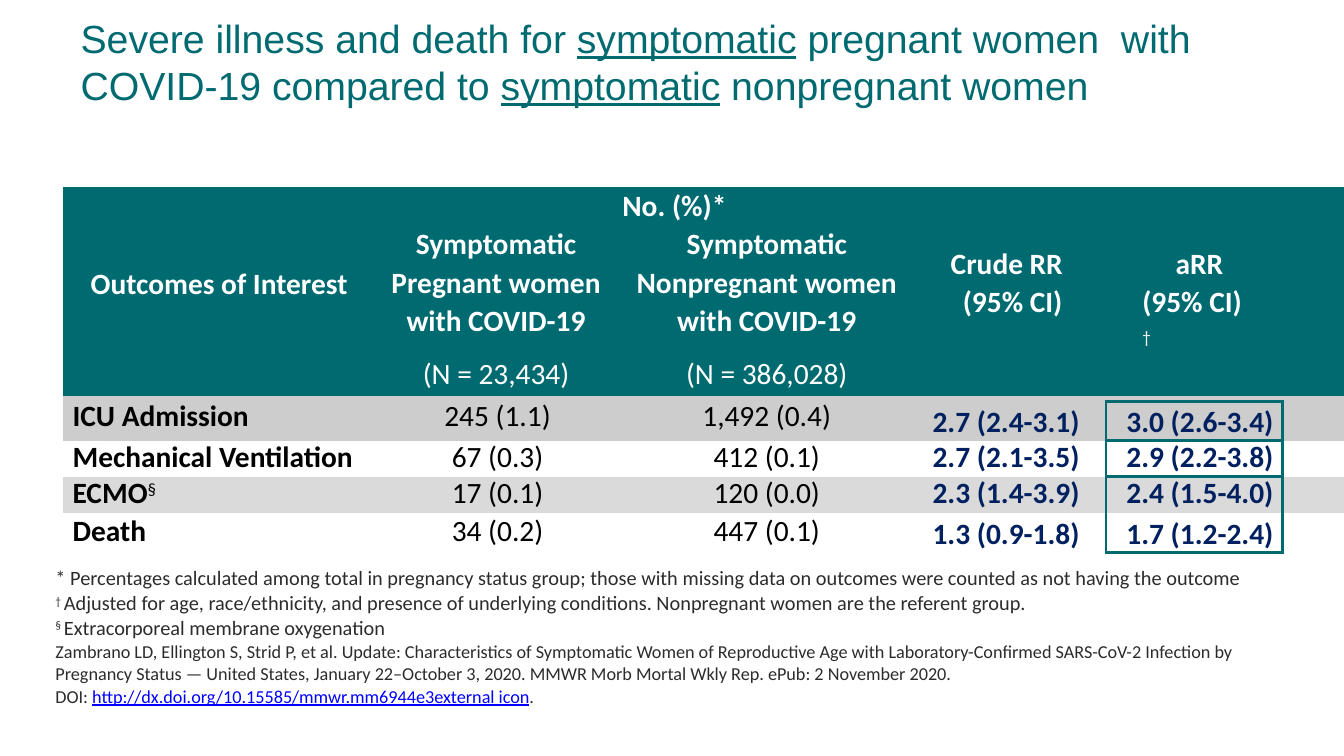
from dataclasses import dataclass

from lxml import etree
from pptx import Presentation
from pptx import util as u
from pptx.dml.color import RGBColor
from pptx.enum import text
from pptx.oxml import ns


@dataclass(frozen=True)
class Theme:
    teal: str = "006A71"
    white: str = "FFFFFF"
    black: str = "000000"
    navy: str = "002060"
    ink: str = "2D2C2C"
    link: str = "0000FF"
    dark_band: str = "CDCDCD"
    light_band: str = "DADADA"
    heading_font: str = "Arial"
    body_font: str = "Calibri"
    title_size: float = 28
    table_size: float = 21
    note_size: float = 14.5
    mark_size: float = 14.2
    citation_size: float = 13
    border: float = 2.25


THEME = Theme()
LEFT, CENTER, RIGHT = text.PP_ALIGN.LEFT, text.PP_ALIGN.CENTER, text.PP_ALIGN.RIGHT
RAISED = {"raised": True, "bold": False}

COLUMNS = [3.08, 2.44, 2.93, 1.9, 1.75, 0.16]
ROWS = [0.42, 1.28, 0.36, 0.06, 0.38, 0.36, 0.36, 0.39]
GROUPS = [
    ("Symptomatic", "Pregnant women\vwith COVID-19", "(N = 23,434)"),
    ("Symptomatic", "Nonpregnant women\vwith COVID-19", "(N = 386,028)"),
]
OUTCOMES = [
    ([("ICU Admission", {})], "245 (1.1)", "1,492 (0.4)", "2.7 (2.4-3.1)", "3.0 (2.6-3.4)"),
    ([("Mechanical Ventilation", {})], "67 (0.3)", "412 (0.1)", "2.7 (2.1-3.5)", "2.9 (2.2-3.8)"),
    ([("ECMO", {}), ("§", RAISED)], "17 (0.1)", "120 (0.0)", "2.3 (1.4-3.9)", "2.4 (1.5-4.0)"),
    ([("Death", {})], "34 (0.2)", "447 (0.1)", "1.3 (0.9-1.8)", "1.7 (1.2-2.4)"),
]
BANDS = [THEME.dark_band, None, THEME.light_band, None]
OUTCOME_SPACING = [23.1, 24.7, 24.7, None]
FIRST_OUTCOME = 4
ADJUSTED = 4

TITLE = [
    ("Severe illness and death for ", {}),
    ("symptomatic", {"underline": True}),
    (" pregnant women  with COVID-19 compared to ", {}),
    ("symptomatic", {"underline": True}),
    (" nonpregnant women", {}),
]
MARK = {"raised": True, "size": THEME.mark_size}
NOTES = [
    [("* Percentages calculated among total in pregnancy status group; those with "
      "missing data on outcomes were counted as not having the outcome", {})],
    [("† ", MARK), ("Adjusted for age, race/ethnicity, and presence of underlying "
                    "conditions. Nonpregnant women are the referent group.", {})],
    [("§ ", MARK), ("Extracorporeal membrane oxygenation", {})],
]
CITATION = [
    [("Zambrano LD, Ellington S, Strid P, et al. Update: Characteristics of Symptomatic "
      "Women of Reproductive Age with Laboratory-Confirmed SARS-CoV-2 Infection by "
      "Pregnancy Status — United States, January 22–October 3, 2020. MMWR Morb Mortal "
      "Wkly Rep. ePub: 2 November 2020.", {})],
    [("DOI: ", {}),
     ("http://dx.doi.org/10.15585/mmwr.mm6944e3external icon",
      {"color": THEME.link, "underline": True}),
     (".", {})],
]


def write(paragraph, pieces, size, color, font=THEME.body_font, bold=False,
          align=LEFT, indent=0, first=0, spacing=None, before=0):
    paragraph.text = pieces[0][0]
    for words, _ in pieces[1:]:
        paragraph.add_run().text = words
    last = len(pieces) - 1
    lead = len(paragraph.runs) - last
    for index, run in enumerate(paragraph.runs):
        look = pieces[max(0, index - lead + 1)][1]
        run.font.name = font
        run.font.size = u.Pt(look.get("size", size))
        run.font.bold = look.get("bold", bold)
        run.font.underline = look.get("underline", False)
        run.font.color.rgb = RGBColor.from_string(look.get("color", color))
        if look.get("raised"):
            run.font._element.set("baseline", "26000")
    paragraph.alignment = align
    paragraph.space_before = u.Pt(before)
    if spacing:
        paragraph.line_spacing = spacing if spacing < 3 else u.Pt(spacing)
    properties = paragraph._p.get_or_add_pPr()
    properties.set("marL", str(u.Inches(indent)))
    properties.set("indent", str(u.Inches(first)))


def text_frame(slide, box, top_inset):
    frame = slide.shapes.add_textbox(*map(u.Inches, box)).text_frame
    frame.word_wrap = True
    frame.margin_left = frame.margin_right = frame.margin_bottom = 0
    frame.margin_top = u.Inches(top_inset)
    return frame


def add_title(slide, box):
    frame = text_frame(slide, box, 0.01)
    write(frame.paragraphs[0], TITLE, THEME.title_size, THEME.teal,
          THEME.heading_font, indent=0.01, before=1)


def add_notes(slide, box):
    frame = text_frame(slide, box, 0.02)
    sized = [(note, THEME.note_size, None, 0.2) for note in NOTES]
    sized += [(line, THEME.citation_size, 1.02, 0.3) for line in CITATION]
    for index, (pieces, size, spacing, before) in enumerate(sized):
        paragraph = frame.add_paragraph() if index else frame.paragraphs[0]
        write(paragraph, pieces, size, THEME.ink, indent=0.04, spacing=spacing, before=before)


def prepare_cell(cell, fill):
    cell.margin_left = cell.margin_right = cell.margin_top = cell.margin_bottom = 0
    cell.text_frame.paragraphs[0]._p.get_or_add_endParaRPr().set("sz", "100")
    if fill:
        cell.fill.solid()
        cell.fill.fore_color.rgb = RGBColor.from_string(fill)
    else:
        cell.fill.background()


def draw_borders(cell, sides):
    properties = cell._tc.get_or_add_tcPr()
    for place, side in enumerate(s for s in "LRTB" if s in sides):
        line = etree.Element(ns.qn(f"a:ln{side}"), w=str(u.Pt(THEME.border)))
        solid = etree.SubElement(line, ns.qn("a:solidFill"))
        etree.SubElement(solid, ns.qn("a:srgbClr"), val=THEME.teal)
        properties.insert(place, line)


def fill_header(table):
    def head(cell, pieces, top=0, bold=True, **layout):
        cell.margin_top = u.Inches(top)
        write(cell.text_frame.paragraphs[0], pieces, THEME.table_size, THEME.white,
              bold=bold, **layout)

    counts = table.cell(0, 0)
    counts.margin_right = u.Inches(0.72)
    head(counts, [("No. (%)*", {})], 0.01, align=CENTER)
    head(table.cell(1, 0), [("Outcomes of Interest", {})], 0.36, indent=0.28)
    for column, (status, group, total) in enumerate(GROUPS, 1):
        cell = table.cell(1, column)
        head(cell, [(status, {})], align=CENTER, spacing=23.2)
        write(cell.text_frame.add_paragraph(), [(group, {})], THEME.table_size, THEME.white,
              bold=True, align=CENTER, spacing=27, before=1.1)
        head(table.cell(2, column), [(total, {})], bold=False, align=CENTER, spacing=23.4)
    head(table.cell(1, 3), [("Crude RR\v(95% CI)", {})], 0.14,
         indent=0.48, first=-0.12, spacing=1.07)
    head(table.cell(1, ADJUSTED), [("aRR\v(95% CI)\v", {}), ("†", RAISED)], 0.14,
         indent=0.36, first=0.33, spacing=1.07)


def fill_outcomes(table):
    layouts = [
        dict(color=THEME.black, bold=True, indent=0.1),
        dict(color=THEME.black, align=CENTER, indent=0.03),
        dict(color=THEME.black, align=CENTER),
        dict(color=THEME.navy, bold=True, indent=0.18),
        dict(color=THEME.navy, bold=True, align=RIGHT),
    ]
    for index, (outcome, spacing) in enumerate(zip(OUTCOMES, OUTCOME_SPACING)):
        row = FIRST_OUTCOME + index
        is_first, is_last = index == 0, index == len(OUTCOMES) - 1
        for column, (value, layout) in enumerate(zip(outcome, layouts)):
            cell = table.cell(row, column)
            pieces = value if column == 0 else [(value, {})]
            is_ratio = column >= 3
            if is_ratio and (is_first or is_last):
                cell.margin_top = u.Inches(0.03)
            write(cell.text_frame.paragraphs[0], pieces, THEME.table_size,
                  spacing=None if is_first and is_ratio else spacing, **layout)
        table.cell(row, ADJUSTED).margin_right = u.Inches(0.09)
        draw_borders(table.cell(row, ADJUSTED - 1), "R")
        draw_borders(table.cell(row, ADJUSTED),
                     "LR" + "TB" * is_first + "T" * (index == 1) + "B" * is_last)
        draw_borders(table.cell(row, ADJUSTED + 1), "L")


def add_outcome_table(slide, box):
    table = slide.shapes.add_table(len(ROWS), len(COLUMNS), *map(u.Inches, box)).table
    table.first_row = table.horz_banding = False
    table._tbl.tblPr.find(ns.qn("a:tableStyleId")).text = "{2D5ABB26-0587-4C30-8999-92F81FD0307C}"
    for column, share in zip(table.columns, COLUMNS):
        column.width = u.Inches(box[2] * share / sum(COLUMNS))
    for row, share in zip(table.rows, ROWS):
        row.height = u.Inches(box[3] * share / sum(ROWS))
    fills = [THEME.teal] * 3 + [THEME.dark_band] + BANDS
    for row, fill in enumerate(fills):
        for column in range(len(COLUMNS)):
            prepare_cell(table.cell(row, column), fill)
    for row in (0, 3):
        table.cell(row, 0).merge(table.cell(row, len(COLUMNS) - 1))
    fill_header(table)
    fill_outcomes(table)


def main():
    deck = Presentation()
    deck.slide_width, deck.slide_height = u.Inches(13.33), u.Inches(7.5)
    slide = deck.slides.add_slide(deck.slide_layouts[6])
    add_outcome_table(slide, (0.62, 1.86, sum(COLUMNS), sum(ROWS)))
    add_title(slide, (0.79, 0.13, 11.66, 1.1))
    add_notes(slide, (0.51, 5.59, 12.09, 1.43))
    deck.save("out.pptx")


if __name__ == "__main__":
    main()
